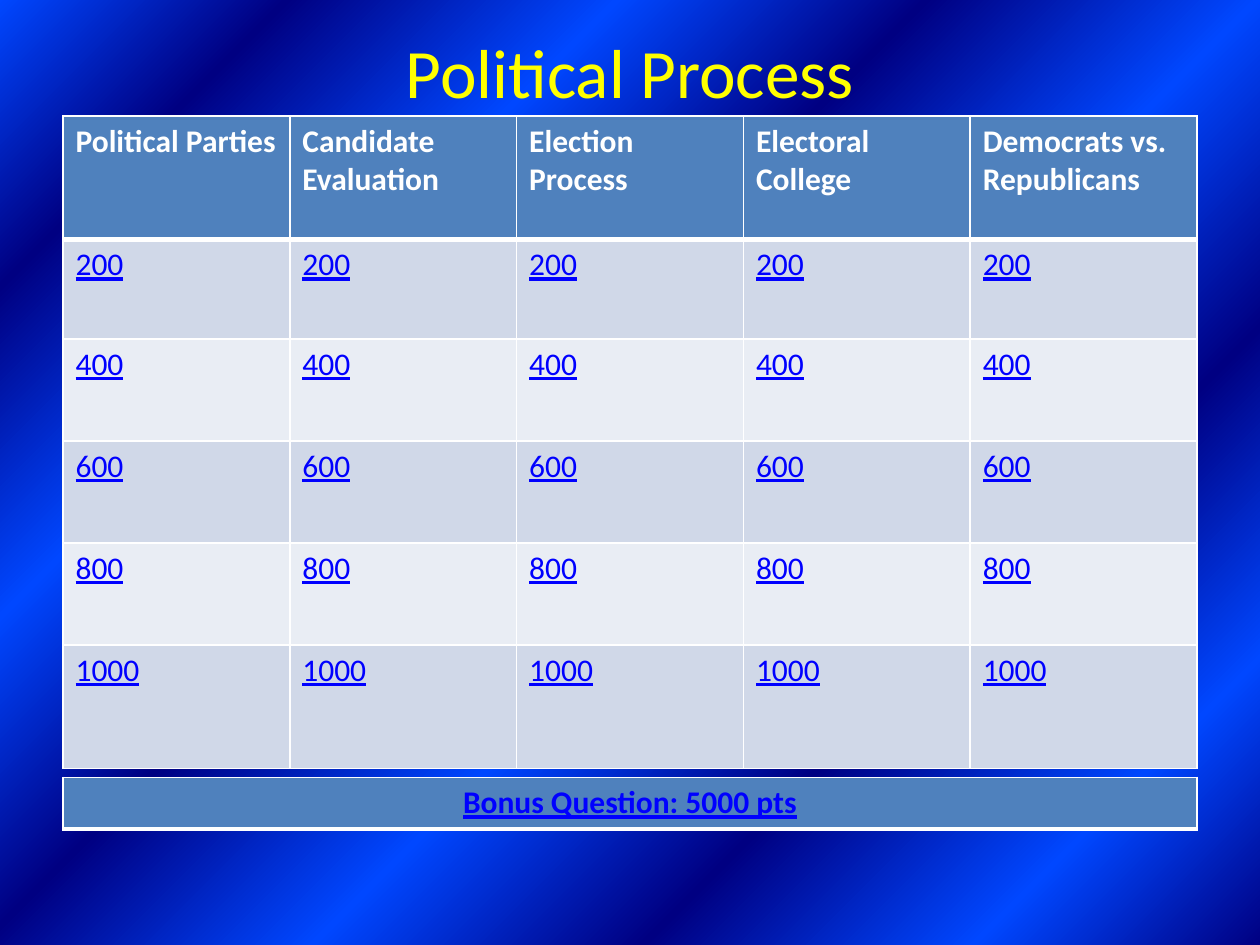
"""Builds the Political Process quiz board with its bonus question bar."""
import pptx
import pptx.dml.color
import pptx.enum.text
import pptx.oxml
import pptx.oxml.ns
import pptx.util

THEME = {
    "font": "Calibri", "title_size": 39.6, "cell_size": 18,
    "title": "FFFF00", "heading": "FFFFFF", "link": "0000FF", "border": "FFFFFF",
    "heading_fill": "4F81BD", "bands": ["D0D8E8", "E9EDF4"],
    "dark": "000082", "bright": "0047FF", "stops": [0, 13, 28, 43, 58, 72, 87, 100],
}
NS = pptx.oxml.ns.nsdecls("a")
CENTER = pptx.enum.text.PP_ALIGN.CENTER


def write(frame, text, color, size, align=None, **formats):
    paragraph = frame.paragraphs[0]
    paragraph.alignment = align
    run = paragraph.add_run()
    run.text = text
    run.font.color.rgb = pptx.dml.color.RGBColor.from_string(color)
    for name, value in {"name": THEME["font"], "size": pptx.util.Pt(size), **formats}.items():
        setattr(run.font, name, value)


def style_cell(cell, fill, bottom_width):
    properties = cell._tc.get_or_add_tcPr()
    for side, points in {"L": 1, "R": 1, "T": 1, "B": bottom_width}.items():
        properties.append(pptx.oxml.parse_xml(
            f'<a:ln{side} {NS} w="{pptx.util.Pt(points)}"><a:solidFill>'
            f'<a:srgbClr val="{THEME["border"]}"/></a:solidFill></a:ln{side}>'))
    cell.fill.solid()
    cell.fill.fore_color.rgb = pptx.dml.color.RGBColor.from_string(fill)


deck = pptx.Presentation()
deck.slide_width, deck.slide_height = pptx.util.Inches(10), pptx.util.Inches(7.5)
board = deck.slides.add_slide(deck.slide_layouts[5])

board.background.fill.gradient()
backdrop = board.element.find(".//" + pptx.oxml.ns.qn("a:gradFill"))
stops = "".join(
    f'<a:gs pos="{stop * 1000}"><a:srgbClr val="{THEME["bright" if index % 2 else "dark"]}"/></a:gs>'
    for index, stop in enumerate(THEME["stops"]))
backdrop.getparent().replace(backdrop, pptx.oxml.parse_xml(
    f'<a:gradFill {NS} rotWithShape="1"><a:gsLst>{stops}</a:gsLst>'
    '<a:path path="circle"><a:fillToRect l="100000" t="100000"/></a:path></a:gradFill>'))

margin = int(deck.slide_width * 0.05)
content_width = deck.slide_width - 2 * margin

heading = board.shapes.title
title_place = {"left": margin, "top": pptx.util.Inches(0.3),
               "width": content_width, "height": pptx.util.Inches(0.53)}
for name, value in title_place.items():
    setattr(heading, name, value)
title_format = {"vertical_anchor": pptx.enum.text.MSO_ANCHOR.MIDDLE,
                "auto_size": pptx.enum.text.MSO_AUTO_SIZE.NONE, "word_wrap": True}
for name, value in title_format.items():
    setattr(heading.text_frame, name, value)
write(heading.text_frame, "Political Process", THEME["title"], THEME["title_size"], CENTER)

categories = ["Political Parties", "Candidate Evaluation", "Election Process",
              "Electoral College", "Democrats vs. Republicans"]
points = ["200", "400", "600", "800", "1000"]
row_heights = [pptx.util.Inches(height) for height in (0.98, 0.79, 0.81, 0.81, 0.81, 0.98)]

questions = board.shapes.add_table(
    len(row_heights), len(categories), margin, pptx.util.Inches(0.92),
    content_width, sum(row_heights)).table
for row, height in zip(questions.rows, row_heights):
    row.height = height
for column, category in enumerate(categories):
    category_cell = questions.cell(0, column)
    style_cell(category_cell, THEME["heading_fill"], 3)
    write(category_cell.text_frame, category, THEME["heading"], THEME["cell_size"], bold=True)
    for row, value in enumerate(points, start=1):
        value_cell = questions.cell(row, column)
        style_cell(value_cell, THEME["bands"][(row - 1) % 2], 1)
        write(value_cell.text_frame, value, THEME["link"], THEME["cell_size"],
              bold=False, underline=True)

bonus = board.shapes.add_table(
    1, 1, margin, pptx.util.Inches(6.17), content_width, pptx.util.Inches(0.41)).table.cell(0, 0)
style_cell(bonus, THEME["heading_fill"], 3)
write(bonus.text_frame, "Bonus Question: 5000 pts", THEME["link"], THEME["cell_size"],
      CENTER, bold=True, underline=True)

deck.save("out.pptx")
